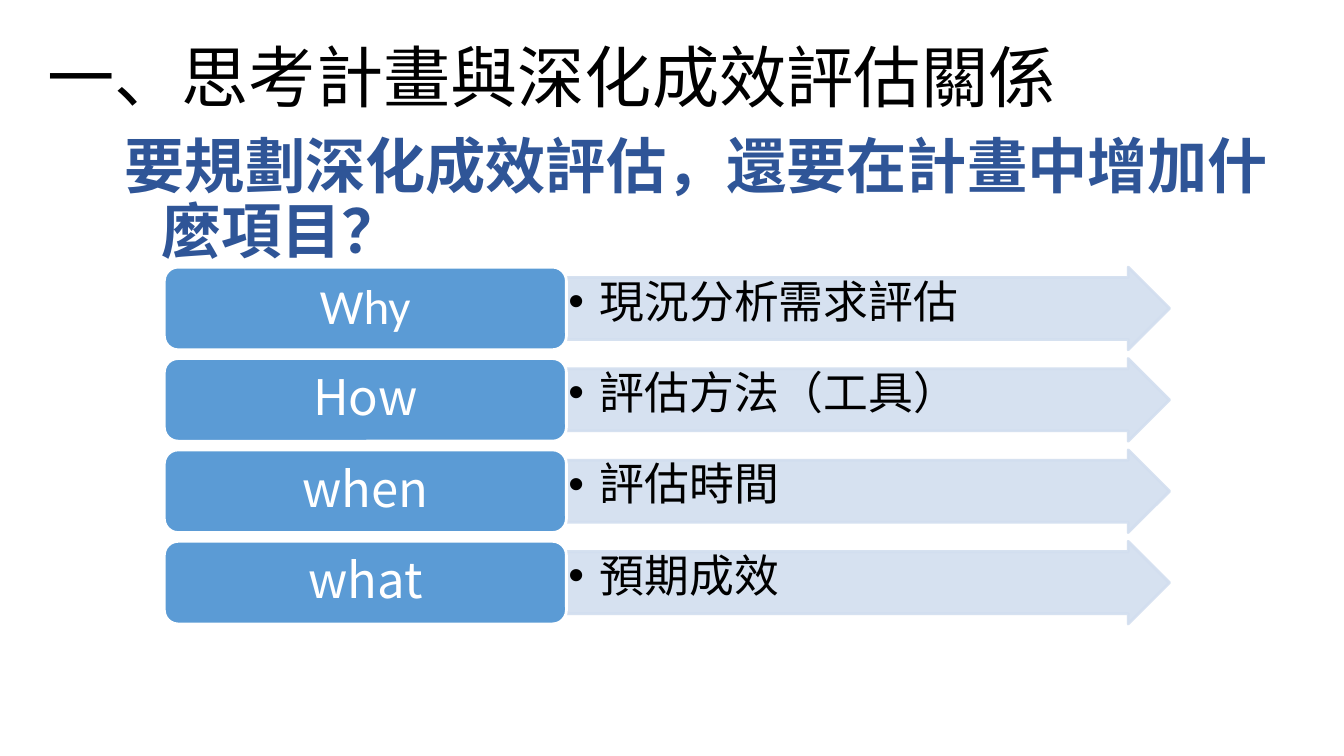
from lxml import etree
from pptx import Presentation, util as u
from pptx.dml.color import RGBColor
from pptx.enum import shapes, text
from pptx.oxml.ns import qn

COLORS = {"black": "000000", "white": "FFFFFF", "navy": "2F5597",
          "blue": "5B9BD5", "pale": "D2DEEF"}
CJK = "Noto Sans CJK SC"
ROWS = [("Why", "現況分析需求評估", "Calibri"),
        ("How", "評估方法（工具）", CJK),
        ("when", "評估時間", CJK),
        ("what", "預期成效", CJK)]


def rgb(name):
    """Return the named colour."""
    return RGBColor.from_string(COLORS[name])


def write(sp, words, color, font, frame, para=None, hang=None, bullet=None):
    """Write one paragraph in a shape, formatted from dicts of values."""
    tf = sp.text_frame
    for name, value in frame.items():
        setattr(tf, name, value)
    p = tf.paragraphs[0]
    if hang:
        pPr = p._p.get_or_add_pPr()
        pPr.set("marL", str(u.Inches(hang[0])))
        pPr.set("indent", str(u.Inches(hang[1])))
        if bullet:
            etree.SubElement(pPr, qn("a:buFont"), typeface="Arial")
            etree.SubElement(pPr, qn("a:buChar"), char=bullet)
    for name, value in (para or {}).items():
        setattr(p, name, value)
    r = p.add_run()
    r.text = words
    r.font.color.rgb = rgb(color)
    for name, value in {"name": CJK, **font}.items():
        setattr(r.font, name, value)
    etree.SubElement(r._r.get_or_add_rPr(), qn("a:ea"), typeface=CJK)


def margins(x, y):
    """Return frame values for equal side and equal top and bottom margins."""
    return {"margin_left": u.Inches(x), "margin_right": u.Inches(x),
            "margin_top": u.Inches(y), "margin_bottom": u.Inches(y)}


def add_title(s, x, y, w, h):
    """Place the slide title."""
    sp = s.shapes.add_textbox(*map(u.Inches, (x, y, w, h)))
    write(sp, "一、思考計畫與深化成效評估關係", "black", {"size": u.Pt(48)},
          {**margins(0.12, 0.06), "word_wrap": False})


def add_question(s, x, y, w, h):
    """Place the question with a hanging second line."""
    sp = s.shapes.add_textbox(*map(u.Inches, (x, y, w, h)))
    write(sp, "要規劃深化成效評估，還要在計畫中增加什麼項目？", "navy",
          {"size": u.Pt(43), "bold": True},
          {**margins(0.1, 0.05), "word_wrap": True},
          {"line_spacing": 0.9}, (0.5, -0.36))


def add_block(s, kind, box, fill, line, alpha=None):
    """Add a filled and outlined shape, optionally translucent."""
    sp = s.shapes.add_shape(kind, *map(u.Inches, box))
    sp.shadow.inherit = False
    sp.fill.solid()
    sp.fill.fore_color.rgb = rgb(fill)
    sp.line.color.rgb = rgb(line)
    sp.line.width = u.Pt(2)
    if alpha:
        for clr in sp._element.spPr.iter(qn("a:srgbClr")):
            etree.SubElement(clr, qn("a:alpha"), val=str(alpha * 1000))
    return sp


def add_rows(s, x, y, w, h, row_h=0.82):
    """Place the label and arrow rows evenly in the box."""
    label_w = w * 0.4
    pitch = (h - row_h) / (len(ROWS) - 1)
    for i, (label, detail, font) in enumerate(ROWS):
        top = y + i * pitch
        arrow = add_block(s, shapes.MSO_SHAPE.RIGHT_ARROW,
                          (x + label_w, top, w - label_w, row_h), "pale", "pale", 90)
        arrow.adjustments[0] = 0.75
        arrow.adjustments[1] = 0.5
        write(arrow, detail, "black", {"size": u.Pt(32)},
              {**margins(0.02, 0.02), "word_wrap": True,
               "vertical_anchor": text.MSO_ANCHOR.TOP},
              {"line_spacing": 0.9, "alignment": text.PP_ALIGN.LEFT},
              (0.31, -0.31), "•")
        block = add_block(s, shapes.MSO_SHAPE.ROUNDED_RECTANGLE,
                          (x, top, label_w, row_h), "blue", "white")
        write(block, label, "white", {"size": u.Pt(35), "name": font},
              {**margins(0.15, 0.07), "word_wrap": True,
               "vertical_anchor": text.MSO_ANCHOR.MIDDLE},
              {"line_spacing": 0.9, "alignment": text.PP_ALIGN.CENTER})


def main():
    """Build and save the slide."""
    prs = Presentation()
    prs.slide_width, prs.slide_height = u.Inches(13.33), u.Inches(7.5)
    s = prs.slides.add_slide(prs.slide_layouts[6])
    add_question(s, 1, 1.31, 11.76, 1.3)
    add_rows(s, 1.63, 2.65, 9.97, 3.54)
    add_title(s, 0.35, 0.29, 10.34, 0.93)
    prs.save("out.pptx")


if __name__ == "__main__":
    main()
